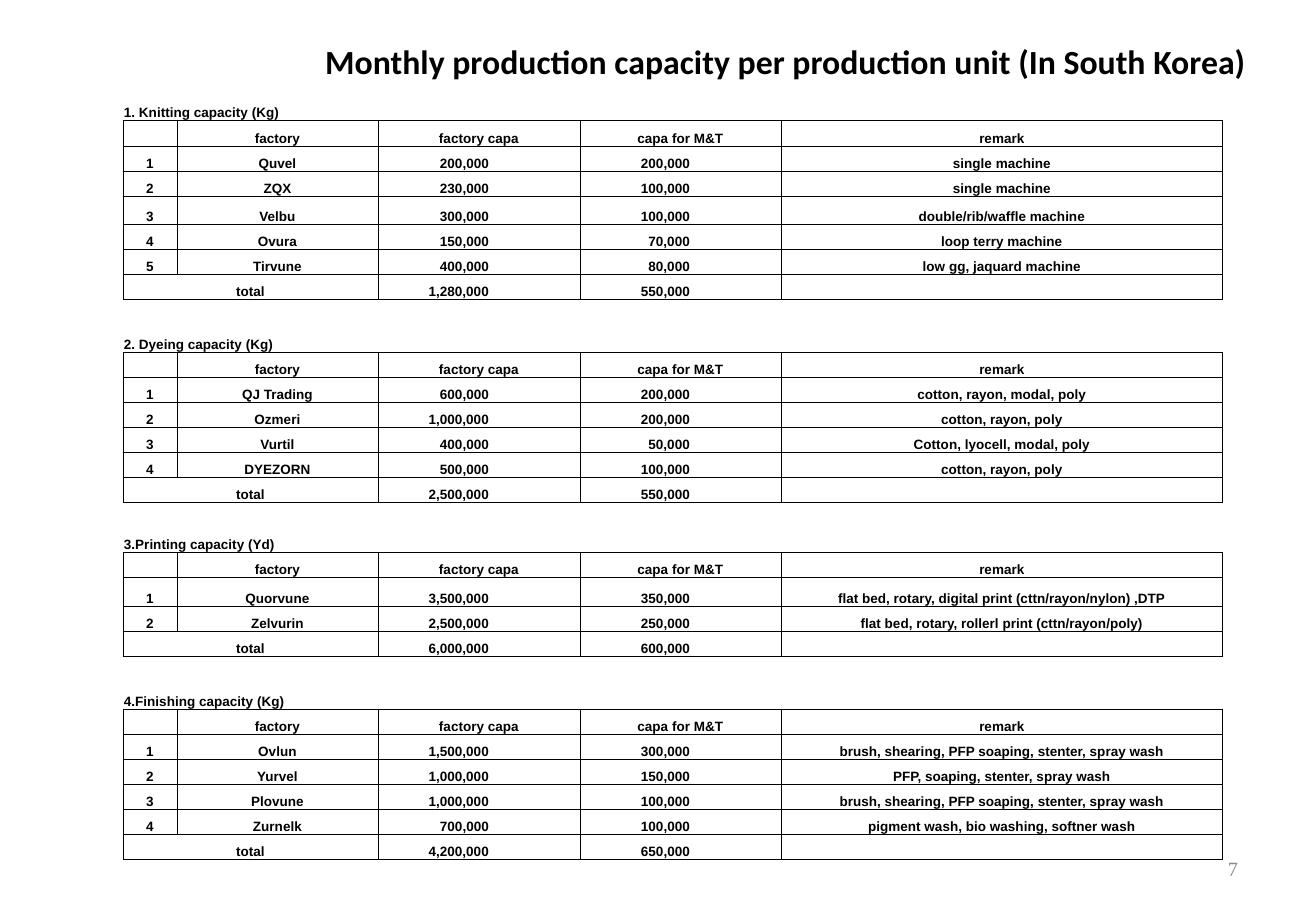
import pptx
import pptx.util
import pptx.dml.color
import pptx.enum.text
import pptx.oxml.ns
from lxml import etree

# Content
TITLE = "Monthly production capacity per production unit (In South Korea)"
PAGE_NUMBER = "7"
HEADER = ("", "factory", "factory capa", "capa for M&T", "remark")
SECTIONS = [
    dict(title="1. Knitting capacity (Kg)", title_span=3, tall_row=3, spacer=0,
         title_height=34, header_height=26, factories=[
             ("Quvel", "200,000", "200,000", "single machine"),
             ("ZQX", "230,000", "100,000", "single machine"),
             ("Velbu", "300,000", "100,000", "double/rib/waffle machine"),
             ("Ovura", "150,000", "70,000", "loop terry machine"),
             ("Tirvune", "400,000", "80,000", "low gg, jaquard machine")],
         total=("1,280,000", "550,000")),
    dict(title="2. Dyeing capacity (Kg)", title_span=2, tall_row=None, spacer=24,
         title_height=29, header_height=25, factories=[
             ("QJ Trading", "600,000", "200,000", "cotton, rayon, modal, poly"),
             ("Ozmeri", "1,000,000", "200,000", "cotton, rayon, poly"),
             ("Vurtil", "400,000", "50,000", "Cotton, lyocell, modal, poly"),
             ("DYEZORN", "500,000", "100,000", "cotton, rayon, poly")],
         total=("2,500,000", "550,000")),
    dict(title="3.Printing capacity (Yd)", title_span=2, tall_row=1, spacer=21,
         title_height=29, header_height=25, factories=[
             ("Quorvune", "3,500,000", "350,000",
              "flat bed, rotary, digital print (cttn/rayon/nylon) ,DTP"),
             ("Zelvurin", "2,500,000", "250,000",
              "flat bed, rotary, rollerl print (cttn/rayon/poly)")],
         total=("6,000,000", "600,000")),
    dict(title="4.Finishing capacity (Kg)", title_span=3, tall_row=None, spacer=24,
         title_height=29, header_height=25, factories=[
             ("Ovlun", "1,500,000", "300,000",
              "brush, shearing, PFP soaping, stenter, spray wash"),
             ("Yurvel", "1,000,000", "150,000", "PFP, soaping, stenter, spray wash"),
             ("Plovune", "1,000,000", "100,000",
              "brush, shearing, PFP soaping, stenter, spray wash"),
             ("Zurnelk", "700,000", "100,000", "pigment wash, bio washing, softner wash")],
         total=("4,200,000", "650,000")),
]

# Layout in px
EMU_PER_PX = 7526
SLIDE_SIZE = (1316, 911)
TITLE_BOX = (120, 35, 1138, 53)
NUMBER_BOX = (1198, 844, 52, 49)
TABLE_ORIGIN = (123, 86)
COLUMN_WIDTHS = (54, 201, 202, 201, 442)
ROW_HEIGHT, TALL_HEIGHT = 25, 29
CELL_MARGIN = 1
AMOUNT_MARGIN = 91
COLORS = {"black": "000000", "gray": "8C8C8C"}
ALIGN = pptx.enum.text.PP_ALIGN
ANCHOR = pptx.enum.text.MSO_ANCHOR


def px(length):
    return pptx.util.Emu(length * EMU_PER_PX)


def write_text(frame, text, font="Arial", size=8, color="black", bold=True,
               align=ALIGN.LEFT):
    para = frame.paragraphs[0]
    para.alignment = align
    if not text:
        # An empty cell keeps the small size so its row stays low
        end = etree.SubElement(para._p, pptx.oxml.ns.qn("a:endParaRPr"))
        end.set("sz", str(size * 100))
        return
    span = para.add_run()
    span.text = text
    span.font.name = font
    span.font.size = pptx.util.Pt(size)
    span.font.bold = bold
    span.font.color.rgb = pptx.dml.color.RGBColor.from_string(COLORS[color])


def add_text_box(page, place, text, anchor, **style):
    box = page.shapes.add_textbox(*map(px, place))
    box.text_frame.word_wrap = True
    box.text_frame.vertical_anchor = anchor
    write_text(box.text_frame, text, **style)


def set_borders(cell, sides):
    properties = cell._tc.get_or_add_tcPr()
    for side in "LRTB":
        line = etree.SubElement(properties, pptx.oxml.ns.qn("a:ln" + side))
        if side in sides:
            line.set("w", str(pptx.util.Pt(0.5)))
            fill = etree.SubElement(line, pptx.oxml.ns.qn("a:solidFill"))
            etree.SubElement(fill, pptx.oxml.ns.qn("a:srgbClr"), val=COLORS["black"])
        else:
            line.set("w", "0")
            etree.SubElement(line, pptx.oxml.ns.qn("a:noFill"))


def list_rows():
    """Give (cell texts, height, bordered sides, merged cells) for every row."""
    blank = ("",) * len(HEADER)
    rows = []
    for section in SECTIONS:
        if section["spacer"]:
            rows.append((blank, section["spacer"], "T", 1))
        rows.append(((section["title"],) + blank[1:], section["title_height"],
                     "B", section["title_span"]))
        rows.append((HEADER, section["header_height"], "LRTB", 1))
        for number, factory in enumerate(section["factories"], 1):
            height = TALL_HEIGHT if number == section["tall_row"] else ROW_HEIGHT
            rows.append(((str(number),) + factory, height, "LRTB", 1))
        rows.append((("total", "") + section["total"] + ("",), ROW_HEIGHT, "LRTB", 2))
    return rows


def add_capacity_table(page):
    rows = list_rows()
    frame = page.shapes.add_table(
        len(rows), len(COLUMN_WIDTHS), *map(px, TABLE_ORIGIN),
        px(sum(COLUMN_WIDTHS)), px(sum(row[1] for row in rows)))
    table = frame.table
    table.first_row = table.horz_banding = False
    for column, width in zip(table.columns, COLUMN_WIDTHS):
        column.width = px(width)
    for index, (texts, height, sides, merged) in enumerate(rows):
        table.rows[index].height = px(height)
        for position, text in enumerate(texts):
            cell = table.cell(index, position)
            is_amount = text[:1].isdigit() and position in (2, 3)
            if is_amount:
                align = ALIGN.RIGHT
            else:
                align = ALIGN.LEFT if sides == "B" else ALIGN.CENTER
            cell.margin_left = cell.margin_top = px(CELL_MARGIN)
            cell.margin_right = px(AMOUNT_MARGIN if is_amount else CELL_MARGIN)
            cell.margin_bottom = 0
            cell.vertical_anchor = ANCHOR.BOTTOM
            set_borders(cell, sides)
            cell.fill.background()
            write_text(cell.text_frame, text, align=align)
        if merged > 1:
            table.cell(index, 0).merge(table.cell(index, merged - 1))


def main():
    deck = pptx.Presentation()
    deck.slide_width, deck.slide_height = map(px, SLIDE_SIZE)
    page = deck.slides.add_slide(deck.slide_layouts[6])
    add_text_box(page, NUMBER_BOX, PAGE_NUMBER, ANCHOR.MIDDLE, font="Times New Roman",
                 size=12, color="gray", bold=False, align=ALIGN.RIGHT)
    add_text_box(page, TITLE_BOX, TITLE, ANCHOR.TOP, font="Calibri", size=20,
                 align=ALIGN.RIGHT)
    add_capacity_table(page)
    deck.save("out.pptx")


if __name__ == "__main__":
    main()
